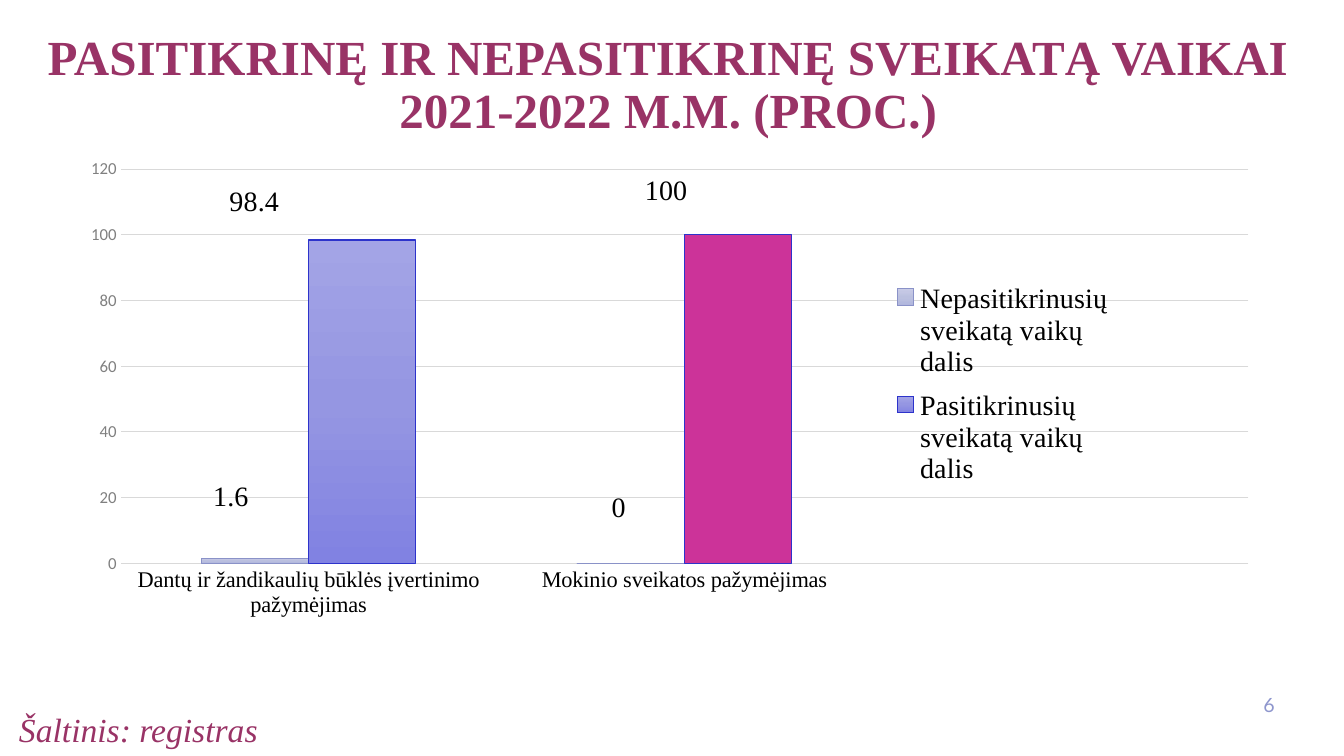
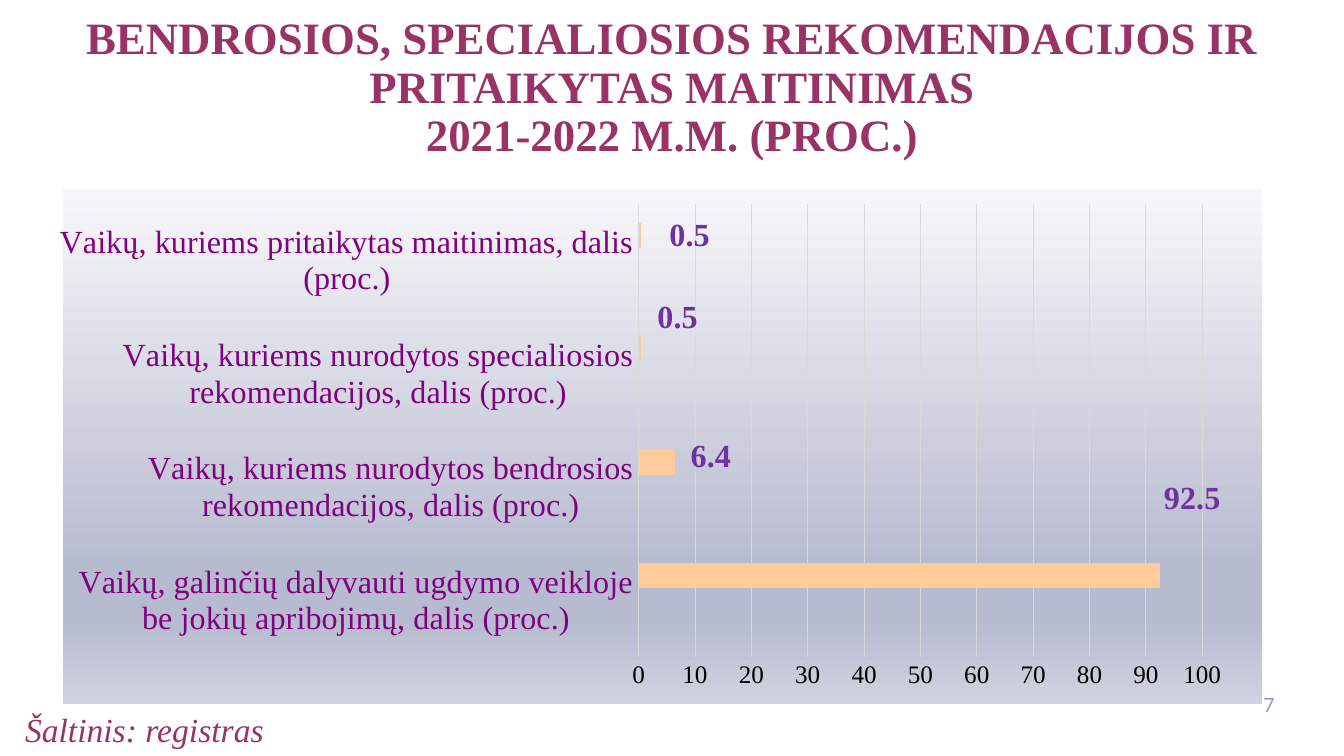
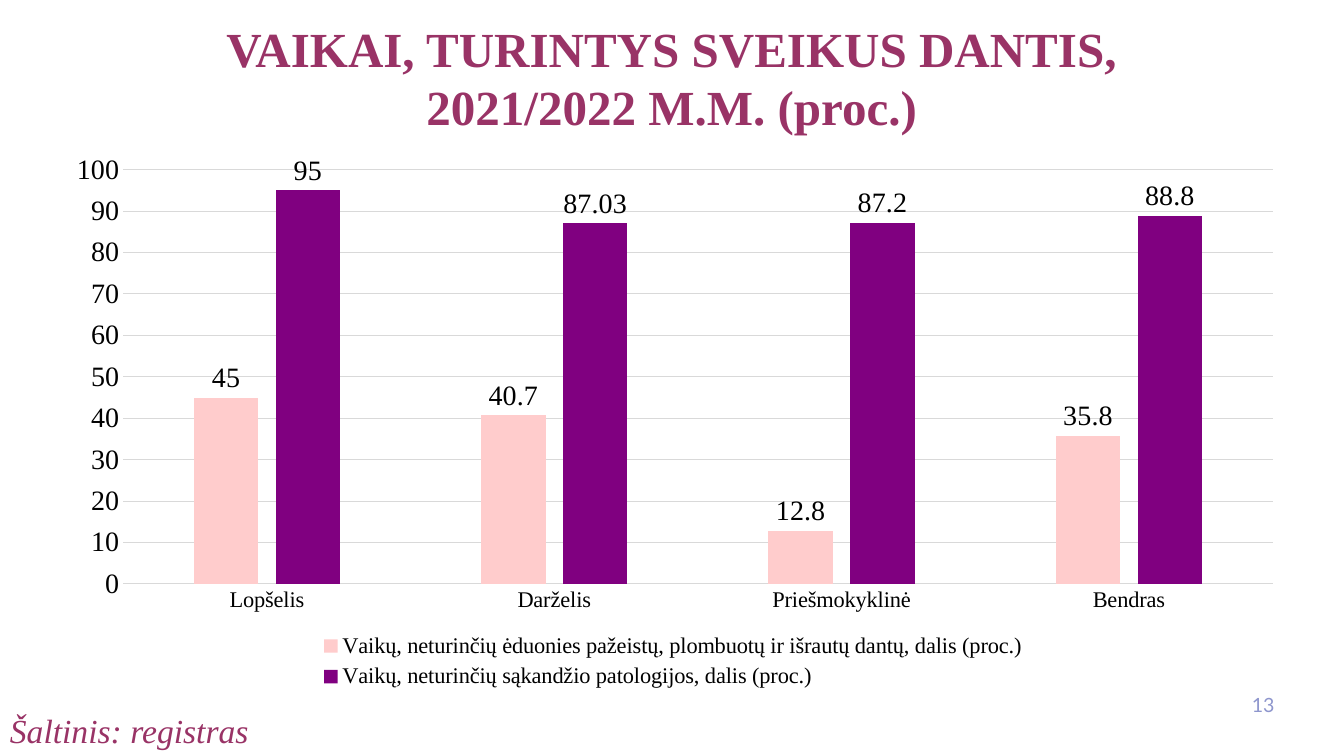
import pptx
import pptx.chart.data
import pptx.dml.color
import pptx.enum.chart
import pptx.enum.text
import pptx.oxml
import pptx.oxml.ns
import pptx.util

RGBColor = pptx.dml.color.RGBColor
Inches = pptx.util.Inches
Pt = pptx.util.Pt
qn = pptx.oxml.ns.qn
XL = pptx.enum.chart
TXT = pptx.enum.text

PLUM = RGBColor(0x99, 0x33, 0x66)
PERIWINKLE = RGBColor(0x8E, 0x96, 0xCD)
BLACK = RGBColor(0, 0, 0)
GREY = RGBColor(0x80, 0x80, 0x80)
GRID = RGBColor(0xD9, 0xD9, 0xD9)
PURPLE = RGBColor(0x80, 0, 0x80)
VIOLET = RGBColor(0x70, 0x30, 0xA0)
MAGENTA = RGBColor(0xCC, 0x33, 0x99)
PEACH = RGBColor(0xFF, 0xCC, 0x99)
PINK = RGBColor(0xFF, 0xCC, 0xCC)
LAVENDER = RGBColor(0x8D, 0x95, 0xCC)
LAVENDER_LINE = RGBColor(0x8A, 0x92, 0xC8)
BLUE = RGBColor(0x2E, 0x34, 0xD0)
BLUE_LINE = RGBColor(0x2D, 0x33, 0xCB)
LAVENDER_FADE = [(0, RGBColor(0xC8, 0xCB, 0xE6)), (50, RGBColor(0xBB, 0xC0, 0xDF)), (100, RGBColor(0xB1, 0xB6, 0xDD))]
BLUE_FADE = [(0, RGBColor(0xA3, 0xA4, 0xE6)), (50, RGBColor(0x95, 0x96, 0xE2)), (100, RGBColor(0x81, 0x82, 0xE2))]
PANEL_FADE = [(0, RGBColor(0xF7, 0xF7, 0xFA)), (74, RGBColor(0xB7, 0xBB, 0xCF)),
              (83, RGBColor(0xB7, 0xBB, 0xCF)), (100, RGBColor(0xCF, 0xD2, 0xDF))]

SERIF = "Times New Roman"
SOURCE = dict(name=SERIF, size=Pt(24), italic=True, color=PLUM)
NUMBER = dict(name="Lato", size=Pt(14), color=PERIWINKLE)
SERIF16 = dict(name=SERIF, size=Pt(16), color=BLACK)
SERIF18 = dict(name=SERIF, size=Pt(18), color=BLACK)
SERIF20 = dict(name=SERIF, size=Pt(20), color=BLACK)

slides = [
    dict(title="PASITIKRINĘ IR NEPASITIKRINĘ SVEIKATĄ VAIKAI 2021-2022 M.M. (PROC.)",
         title_at=(-0.12, 0.28, 13.5, 1.38), title_size=35, spacing=0.9, inset=0.1,
         source_at=(0.09, 6.98, 6.3, 0.38), number="6",
         kind=XL.XL_CHART_TYPE.COLUMN_CLUSTERED, chart_at=(0.72, 1.44, 11.9, 5.93),
         cats=["Dantų ir žandikaulių būklės įvertinimo pažymėjimas", "Mokinio sveikatos pažymėjimas", ""],
         series=[
             dict(name="Nepasitikrinusių sveikatą vaikų dalis", vals=[1.6, 0, None], fill=LAVENDER_FADE,
                  line=LAVENDER_LINE, shifts=[(-0.02, -0.07), (-0.01, -0.06)]),
             dict(name="Pasitikrinusių sveikatą vaikų dalis", vals=[98.4, 100, None], fill=BLUE_FADE,
                  line=BLUE_LINE, points={1: MAGENTA}, shifts=[(-0.09, -0.03), (-0.06, -0.04)])],
         gap=150, overlap=0, top=120, step=20, cat_font=SERIF16, cat_line=None,
         val_font=dict(name="Calibri", size=Pt(12), color=GREY), label_font=SERIF20,
         plot=(0.04, 0.04, 0.94, 0.66), legend=(0.68, 0.21, 0.19, 0.38), legend_font=SERIF20),
    dict(title="BENDROSIOS, SPECIALIOSIOS REKOMENDACIJOS IR PRITAIKYTAS MAITINIMAS\v2021-2022 M.M. (PROC.)",
         title_at=(-0.11, 0.11, 13.55, 1.38), title_size=32, spacing=0.9, inset=0.1,
         source_at=(0.15, 6.98, 6.3, 0.38), number="7",
         kind=XL.XL_CHART_TYPE.BAR_CLUSTERED, chart_at=(0.59, 1.87, 11.93, 5.11),
         cats=["Vaikų, galinčių dalyvauti ugdymo veikloje be jokių apribojimų, dalis (proc.)",
               "Vaikų, kuriems nurodytos bendrosios rekomendacijos, dalis (proc.)",
               "Vaikų, kuriems nurodytos specialiosios rekomendacijos, dalis (proc.)",
               "Vaikų, kuriems pritaikytas maitinimas, dalis (proc.)"],
         series=[
             dict(name="Series 1", vals=[None] * 4, fill=LAVENDER),
             dict(name="Series 2", vals=[None] * 4, fill=BLUE),
             dict(name="Series 3", vals=[92.5, 6.4, 0.5, 0.5], fill=PEACH,
                  shifts=[(0, -0.15), (0.01, -0.01), (0.01, -0.06), (0.02, 0)])],
         gap=150, overlap=0, top=100, step=10,
         cat_font=dict(name=SERIF, size=Pt(23), color=PURPLE), cat_line=None, val_font=SERIF18,
         label_font=dict(name=SERIF, size=Pt(23), bold=True, color=VIOLET),
         plot=(0.48, 0.03, 0.47, 0.88), panel=PANEL_FADE),
    dict(title="VAIKAI, TURINTYS SVEIKUS DANTIS,\n2021/2022 M.M. (proc.)",
         title_at=(2.11, 0.13, 9.11, 1.28), title_size=35, spacing=1.0, inset=0,
         source_at=(0, 6.99, 6.67, 0.5), number="13",
         kind=XL.XL_CHART_TYPE.COLUMN_CLUSTERED, chart_at=(0.48, 1.41, 12.39, 5.48),
         cats=["Lopšelis", "Darželis", "Priešmokyklinė", "Bendras"],
         series=[
             dict(name="Vaikų, neturinčių ėduonies pažeistų, plombuotų ir išrautų dantų, dalis (proc.)",
                  vals=[45, 40.7, 12.8, 35.8], fill=PINK),
             dict(name="Vaikų, neturinčių sąkandžio patologijos, dalis (proc.)",
                  vals=[95, 87.03, 87.2, 88.8], fill=PURPLE)],
         gap=219, overlap=-27, top=100, step=10, cat_font=SERIF16, cat_line=GRID,
         val_font=SERIF20, label_font=SERIF20,
         plot=(0.06, 0.05, 0.92, 0.75), legend=(0.22, 0.88, 0.56, 0.12), legend_font=SERIF16),
]


def style(font, values):
    for key, value in values.items():
        if key == "color":
            font.color.rgb = value
        else:
            setattr(font, key, value)


def place(parent, index, box, target=None):
    for old in parent.findall(qn("c:layout")):
        parent.remove(old)
    layout = pptx.oxml.parse_xml(f'<c:layout {pptx.oxml.ns.nsdecls("c")}><c:manualLayout/></c:layout>')
    items = [("layoutTarget", target)] if target else []
    if len(box) == 4:
        items += [("xMode", "edge"), ("yMode", "edge")]
    items += zip("xywh", box)
    for tag, value in items:
        layout[0].append(layout.makeelement(qn("c:" + tag), {"val": str(value)}))
    parent.insert(index, layout)


prs = pptx.Presentation()
prs.slide_width, prs.slide_height = Inches(13.33), Inches(7.5)

for d in slides:
    s = prs.slides.add_slide(prs.slide_layouts[5])
    title = s.shapes.title
    title.left, title.top, title.width, title.height = map(Inches, d["title_at"])
    tf = title.text_frame
    tf.text = d["title"]
    frame = dict(word_wrap=True, auto_size=TXT.MSO_AUTO_SIZE.NONE, vertical_anchor=TXT.MSO_ANCHOR.TOP,
                 margin_left=Inches(d["inset"]), margin_right=Inches(d["inset"]))
    for key, value in frame.items():
        setattr(tf, key, value)
    for p in tf.paragraphs:
        p.alignment = TXT.PP_ALIGN.CENTER
        p.line_spacing = d["spacing"]
        for r in p.runs:
            style(r.font, dict(name=SERIF, size=Pt(d["title_size"]), bold=True, color=PLUM))

    cd = pptx.chart.data.CategoryChartData()
    cd.categories = d["cats"]
    for item in d["series"]:
        cd.add_series(item["name"], item["vals"])
    chart = s.shapes.add_chart(d["kind"], *map(Inches, d["chart_at"]), cd).chart
    chart.has_title = False
    style(chart.font, dict(name="Calibri", size=Pt(10), color=BLACK))
    plot = chart.plots[0]
    plot.vary_by_categories = False
    plot.gap_width, plot.overlap = d["gap"], d["overlap"]
    place(chart.element.find(".//" + qn("c:plotArea")), 0, d["plot"], "inner")

    for axis, font in ((chart.category_axis, d["cat_font"]), (chart.value_axis, d["val_font"])):
        axis.major_tick_mark = axis.minor_tick_mark = XL.XL_TICK_MARK.NONE
        axis.format.line.fill.background()
        style(axis.tick_labels.font, font)
    if d["cat_line"]:
        chart.category_axis.format.line.color.rgb = d["cat_line"]
        chart.category_axis.format.line.width = Pt(0.75)
    axis = chart.value_axis
    axis.minimum_scale, axis.maximum_scale, axis.major_unit = 0, d["top"], d["step"]
    axis.has_major_gridlines = True
    axis.major_gridlines.format.line.color.rgb = GRID
    axis.major_gridlines.format.line.width = Pt(0.75)

    chart.has_legend = "legend" in d
    if chart.has_legend:
        legend = chart.legend
        legend.position = XL.XL_LEGEND_POSITION.BOTTOM
        legend.include_in_layout = False
        style(legend.font, d["legend_font"])
        place(legend._element, 1, d["legend"])

    fades = []
    if "panel" in d:
        panel = pptx.oxml.parse_xml(f'<c:spPr {pptx.oxml.ns.nsdecls("c", "a")}><a:ln><a:noFill/></a:ln></c:spPr>')
        chart.element.find(qn("c:chart")).addnext(panel)
        fades.append((panel, d["panel"]))

    for ser, item in zip(plot.series, d["series"]):
        if isinstance(item["fill"], list):
            fades.append((ser._element.get_or_add_spPr(), item["fill"]))
        else:
            ser.format.fill.solid()
            ser.format.fill.fore_color.rgb = item["fill"]
        formats = [ser.format]
        for index, color in item.get("points", {}).items():
            point = ser.points[index]
            point.format.fill.solid()
            point.format.fill.fore_color.rgb = color
            formats.append(point.format)
        if "line" in item:
            for f in formats:
                f.line.color.rgb = item["line"]
                f.line.width = Pt(0.75)
        labels = ser.data_labels
        labels.show_value = True
        labels.position = XL.XL_LABEL_POSITION.OUTSIDE_END
        style(labels.font, d["label_font"])
        for index, shift in enumerate(item.get("shifts", [])):
            label = ser.points[index].data_label
            label.position = XL.XL_LABEL_POSITION.OUTSIDE_END
            style(label.font, d["label_font"])
            place(ser._element.findall(".//" + qn("c:dLbl"))[index], 1, shift)
        for leader in ser._element.findall(".//" + qn("c:showLeaderLines")):
            leader.set("val", "0")

    for spPr, stops in fades:
        gs = "".join(f'<a:gs pos="{pos * 1000}"><a:srgbClr val="{color}"/></a:gs>' for pos, color in stops)
        spPr.insert(0, pptx.oxml.parse_xml(
            f'<a:gradFill {pptx.oxml.ns.nsdecls("a")} rotWithShape="1"><a:gsLst>{gs}</a:gsLst>'
            '<a:lin ang="5400000" scaled="0"/></a:gradFill>'))

    for box, text, font, align, anchor in (
            (d["source_at"], "Šaltinis: registras", SOURCE, TXT.PP_ALIGN.LEFT, TXT.MSO_ANCHOR.TOP),
            ((12.22, 6.79, 0.52, 0.4), d["number"], NUMBER, TXT.PP_ALIGN.RIGHT, TXT.MSO_ANCHOR.MIDDLE)):
        tf = s.shapes.add_textbox(*map(Inches, box)).text_frame
        tf.word_wrap = True
        tf.vertical_anchor = anchor
        p = tf.paragraphs[0]
        p.alignment = align
        r = p.add_run()
        r.text = text
        style(r.font, font)

prs.save("out.pptx")
